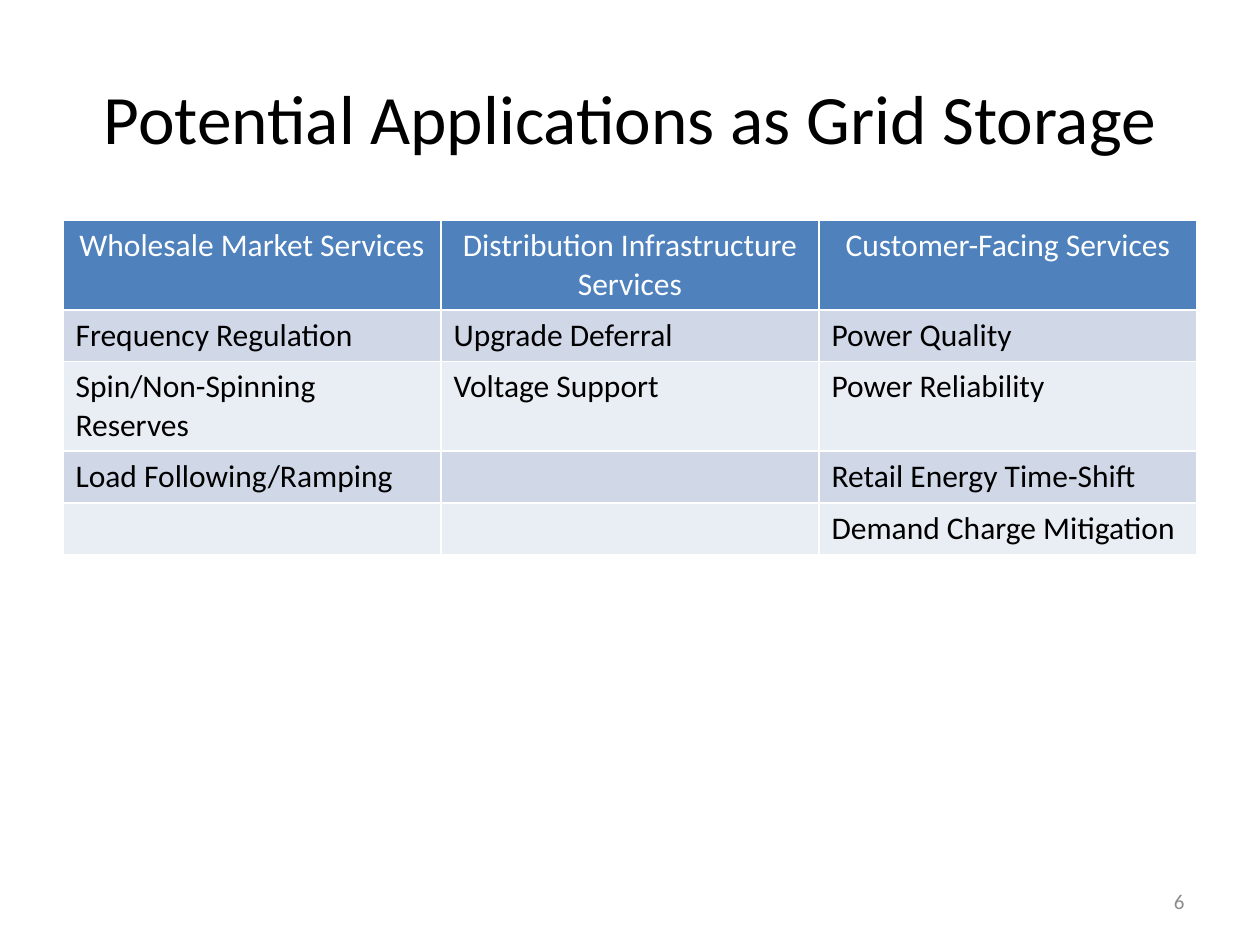
import dataclasses

import lxml.etree
import pptx
import pptx.dml.color
import pptx.enum.text
import pptx.oxml.ns
import pptx.util

Inches = pptx.util.Inches
ALIGN = pptx.enum.text.PP_ALIGN
FONT = "Calibri"
BLACK = "000000"
WHITE = "FFFFFF"
GRAY = "8C8C8C"


@dataclasses.dataclass(frozen=True)
class RowStyle:
    fill: str
    text_color: str
    alignment: ALIGN


@dataclasses.dataclass(frozen=True)
class ServiceColumn:
    heading: str
    services: tuple[str, ...]


HEADER = RowStyle("4F81BD", WHITE, ALIGN.CENTER)
BANDS = (
    RowStyle("D0D8E8", BLACK, ALIGN.LEFT),
    RowStyle("E9EDF4", BLACK, ALIGN.LEFT),
)
COLUMNS = (
    ServiceColumn(
        "Wholesale Market Services",
        ("Frequency Regulation", "Spin/Non-Spinning Reserves", "Load Following/Ramping"),
    ),
    ServiceColumn(
        "Distribution Infrastructure Services",
        ("Upgrade Deferral", "Voltage Support"),
    ),
    ServiceColumn(
        "Customer-Facing Services",
        ("Power Quality", "Power Reliability", "Retail Energy Time-Shift", "Demand Charge Mitigation"),
    ),
)


def rgb(value: str) -> pptx.dml.color.RGBColor:
    return pptx.dml.color.RGBColor.from_string(value)


def write_text(text_frame, text: str, size: float, color: str, alignment: ALIGN) -> None:
    text_frame.text = text
    paragraph = text_frame.paragraphs[0]
    paragraph.alignment = alignment
    for run in paragraph.runs:
        run.font.name = FONT
        run.font.size = pptx.util.Pt(size)
        run.font.bold = False
        run.font.color.rgb = rgb(color)


def add_borders(cell, color: str, bottom_width: float) -> None:
    qn = pptx.oxml.ns.qn
    properties = cell._tc.get_or_add_tcPr()
    for side, width in (("lnL", 1), ("lnR", 1), ("lnT", 1), ("lnB", bottom_width)):
        line = lxml.etree.SubElement(properties, qn(f"a:{side}"), w=str(pptx.util.Pt(width)))
        fill = lxml.etree.SubElement(line, qn("a:solidFill"))
        lxml.etree.SubElement(fill, qn("a:srgbClr"), val=color)


def write_cell(cell, text: str, style: RowStyle) -> None:
    add_borders(cell, WHITE, 1)
    cell.fill.solid()
    cell.fill.fore_color.rgb = rgb(style.fill)
    write_text(cell.text_frame, text, 18, style.text_color, style.alignment)


def add_title(slide, text: str) -> None:
    title = slide.shapes.title
    title.left, title.top = Inches(0.5), Inches(0.3)
    title.width, title.height = Inches(9), Inches(1.25)
    title.text_frame.auto_size = pptx.enum.text.MSO_AUTO_SIZE.NONE
    title.text_frame.vertical_anchor = pptx.enum.text.MSO_ANCHOR.MIDDLE
    write_text(title.text_frame, text, 39.6, BLACK, ALIGN.CENTER)


def add_services_table(slide, columns: tuple[ServiceColumn, ...]) -> None:
    row_count = 1 + max(len(column.services) for column in columns)
    table = slide.shapes.add_table(
        row_count, len(columns), Inches(0.5), Inches(1.75), Inches(9), Inches(0.41 * row_count)
    ).table
    for column_index, column in enumerate(columns):
        write_cell(table.cell(0, column_index), column.heading, HEADER)
        for row_index in range(1, row_count):
            service = "".join(column.services[row_index - 1:row_index])
            style = BANDS[(row_index - 1) % len(BANDS)]
            write_cell(table.cell(row_index, column_index), service, style)


def add_page_number(slide, number: int) -> None:
    text_frame = slide.shapes.add_textbox(
        Inches(7.17), Inches(6.95), Inches(2.33), Inches(0.4)
    ).text_frame
    text_frame.word_wrap = True
    text_frame.vertical_anchor = pptx.enum.text.MSO_ANCHOR.MIDDLE
    write_text(text_frame, str(number), 12, GRAY, ALIGN.RIGHT)


def main() -> None:
    presentation = pptx.Presentation()
    presentation.slide_width = Inches(10)
    presentation.slide_height = Inches(7.5)
    slide = presentation.slides.add_slide(presentation.slide_layouts.get_by_name("Title Only"))
    add_title(slide, "Potential Applications as Grid Storage")
    add_services_table(slide, COLUMNS)
    add_page_number(slide, 6)
    presentation.save("out.pptx")


if __name__ == "__main__":
    main()
